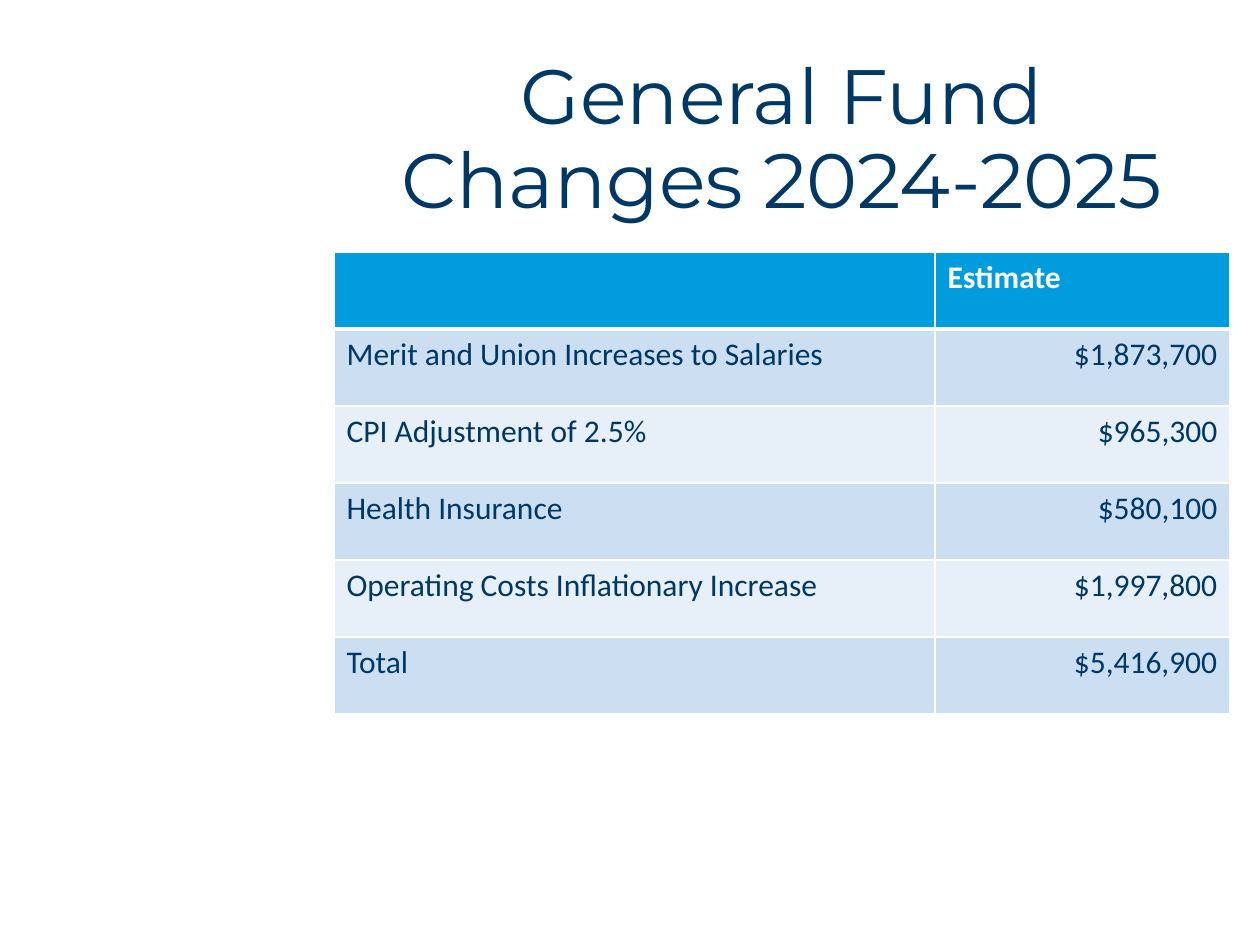
"""Build the General Fund changes slide with its table of estimates."""
from dataclasses import dataclass

from lxml import etree
from pptx import Presentation, util as u
from pptx.dml import color
from pptx.enum import text
from pptx.oxml import ns

PX_PER_INCH = 126
COLORS = {"navy": "003865", "header": "009CDE", "odd": "CCDEF2",
          "even": "E7EFF9", "white": "FFFFFF"}
LEFT, WIDTH, TABLE_TOP, ROW_HEIGHT = 334, 896, 252, 77
COLUMNS = (601, 295)
ALIGN = text.PP_ALIGN


@dataclass(frozen=True)
class Change:
    label: str
    estimate: str


CHANGES = (
    Change("Merit and Union Increases to Salaries", "$1,873,700"),
    Change("CPI Adjustment of 2.5%", "$965,300"),
    Change("Health Insurance", "$580,100"),
    Change("Operating Costs Inflationary Increase", "$1,997,800"),
    Change("Total", "$5,416,900"),
)


def px(n: int) -> u.Emu:
    return u.Emu(round(n * 914400 / PX_PER_INCH))


def rgb(name: str) -> color.RGBColor:
    return color.RGBColor.from_string(COLORS[name])


def write(tf, content: str, *, size=18, font="Calibri", fill="navy",
          bold=False, align=ALIGN.LEFT, spacing=1.0) -> None:
    p = tf.paragraphs[0]
    p.alignment, p.line_spacing = align, spacing
    r = p.add_run()
    r.text = content
    r.font.size, r.font.name, r.font.bold = u.Pt(size), font, bold
    r.font.color.rgb = rgb(fill)


def set_borders(cell, widths: dict[str, int]) -> None:
    pr = cell._tc.get_or_add_tcPr()
    for i, (side, width) in enumerate(widths.items()):
        ln = etree.Element(ns.qn(f"a:ln{side}"), w=str(u.Pt(width)))
        solid = etree.SubElement(ln, ns.qn("a:solidFill"))
        etree.SubElement(solid, ns.qn("a:srgbClr"), val=COLORS["white"])
        pr.insert(i, ln)


def add_title(s, content: str) -> None:
    tf = s.shapes.add_textbox(px(LEFT), px(50), px(WIDTH), px(183)).text_frame
    tf.word_wrap = True
    tf.vertical_anchor = text.MSO_ANCHOR.MIDDLE
    write(tf, content, size=44, font="Montserrat", align=ALIGN.CENTER,
          spacing=0.9)


def fill_row(table, row: int, change: Change) -> None:
    header = row == 0
    band = "header" if header else "odd" if row % 2 else "even"
    amount_align = ALIGN.LEFT if header else ALIGN.RIGHT
    table.rows[row].height = px(ROW_HEIGHT)
    for col, (content, align) in enumerate(
            ((change.label, ALIGN.LEFT), (change.estimate, amount_align))):
        cell = table.cell(row, col)
        cell.fill.solid()
        cell.fill.fore_color.rgb = rgb(band)
        set_borders(cell, {"L": 1, "R": 1, "T": 3 if row == 1 else 1,
                           "B": 3 if header else 1})
        if content:
            write(cell.text_frame, content, bold=header, align=align,
                  fill="white" if header else "navy")


def add_changes_table(s, changes: tuple[Change, ...]) -> None:
    rows = (Change("", "Estimate"), *changes)
    table = s.shapes.add_table(
        len(rows), len(COLUMNS), px(LEFT), px(TABLE_TOP), px(WIDTH),
        px(ROW_HEIGHT * len(rows))).table
    for column, width in zip(table.columns, COLUMNS):
        column.width = px(width)
    for row, change in enumerate(rows):
        fill_row(table, row, change)


def main() -> None:
    prs = Presentation()
    prs.slide_width, prs.slide_height = px(1260), px(945)
    s = prs.slides.add_slide(prs.slide_layouts[6])
    add_title(s, "General Fund Changes 2024-2025")
    add_changes_table(s, CHANGES)
    prs.save("out.pptx")


if __name__ == "__main__":
    main()
